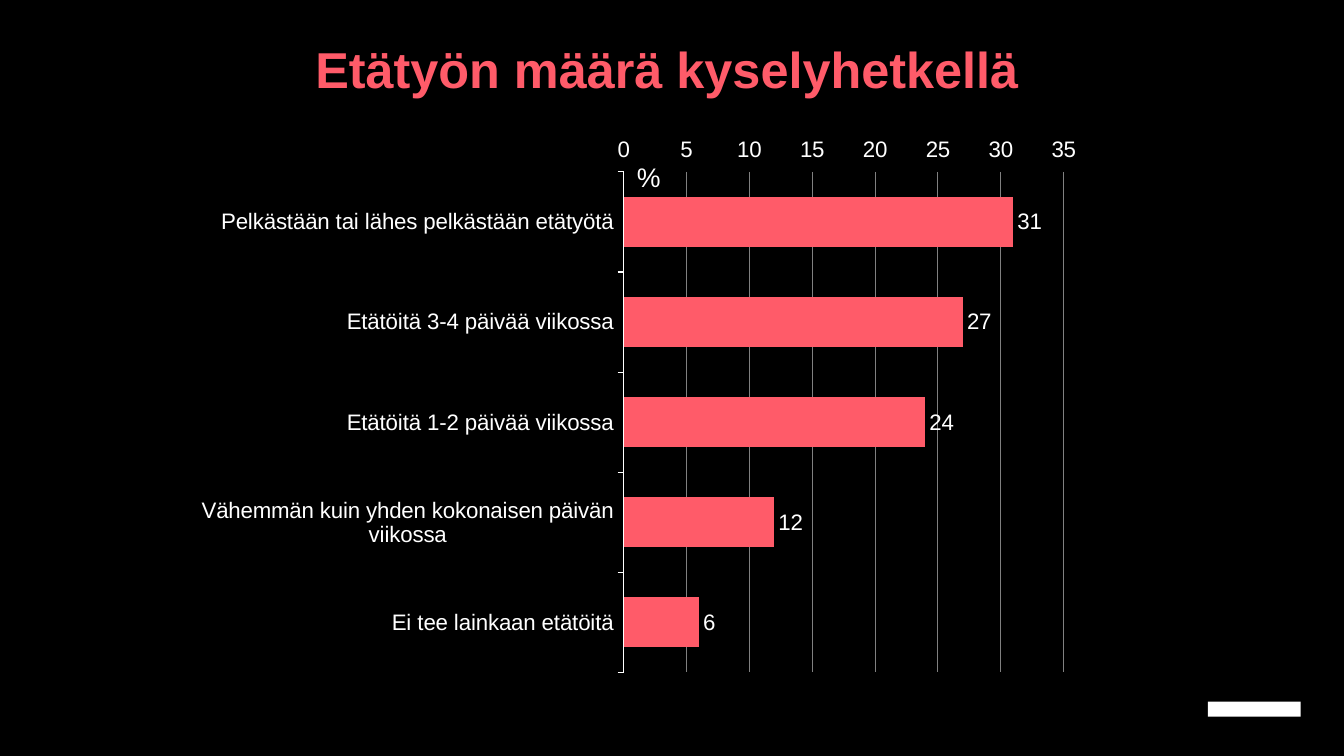
from pptx import Presentation
from pptx.chart.data import CategoryChartData
from pptx.dml.color import RGBColor
from pptx.enum.chart import XL_CHART_TYPE, XL_LABEL_POSITION, XL_TICK_MARK
from pptx.enum.shapes import MSO_SHAPE
from pptx.enum.text import MSO_ANCHOR, MSO_AUTO_SIZE, PP_ALIGN
from pptx.oxml import parse_xml
from pptx.oxml.ns import nsdecls, qn
from pptx.util import Inches, Pt

BAR = XL_CHART_TYPE.BAR_CLUSTERED
OUT_END = XL_LABEL_POSITION.OUTSIDE_END
OUT_TICK = XL_TICK_MARK.OUTSIDE
BLOCK = MSO_SHAPE.RECTANGLE
MIDDLE, CENTER = MSO_ANCHOR.MIDDLE, PP_ALIGN.CENTER
NO_FIT = MSO_AUTO_SIZE.NONE

BLACK = RGBColor(0x00, 0x00, 0x00)
WHITE = RGBColor(0xFF, 0xFF, 0xFF)
CORAL = RGBColor(0xFF, 0x5B, 0x69)
GREY = RGBColor(0x80, 0x80, 0x80)
FONT = "Arial"

SHARES = {
    "Pelkästään tai lähes pelkästään etätyötä": 31,
    "Etätöitä 3-4 päivää viikossa": 27,
    "Etätöitä 1-2 päivää viikossa": 24,
    "Vähemmän kuin yhden kokonaisen päivän viikossa": 12,
    "Ei tee lainkaan etätöitä": 6,
}


def style(font, size, color, bold=False):
    font.name, font.size, font.bold = FONT, Pt(size), bold
    font.color.rgb = color


def place(part, target="", **spots):
    """Fix a chart part at fractions of the chart's size."""
    old = part.find(qn("c:layout"))
    if old is not None:
        part.remove(old)
    inner = f'<c:layoutTarget val="{target}"/>' if target else ""
    inner += '<c:xMode val="edge"/><c:yMode val="edge"/>'
    inner += "".join(f'<c:{key} val="{val}"/>' for key, val in spots.items())
    layout = parse_xml(
        f'<c:layout {nsdecls("c")}><c:manualLayout>{inner}'
        "</c:manualLayout></c:layout>")
    text = part.find(qn("c:tx"))
    if text is None:
        part.insert(0, layout)
    else:
        text.addnext(layout)


def add_title(slide, text):
    title = slide.shapes.title
    title.left, title.top = Inches(1.25), Inches(0.29)
    title.width, title.height = Inches(10.83), Inches(0.86)
    frame = title.text_frame
    frame.text = text
    frame.word_wrap, frame.auto_size = True, NO_FIT
    frame.vertical_anchor = MIDDLE
    frame.margin_left, frame.margin_right = 0, Inches(0.1)
    line = frame.paragraphs[0]
    line.alignment, line.line_spacing = CENTER, 0.9
    style(line.font, 36, CORAL, True)


def add_mark(slide):
    mark = slide.shapes.add_shape(
        BLOCK, Inches(11.98), Inches(6.96), Inches(0.92), Inches(0.15))
    mark.shadow.inherit = False
    mark.fill.solid()
    mark.fill.fore_color.rgb = WHITE
    mark.line.fill.background()


def format_axes(chart):
    cats, vals = chart.category_axis, chart.value_axis
    cats.reverse_order = True
    cats.has_major_gridlines = False
    cats.format.line.color.rgb = WHITE
    cats.format.line.width = Pt(0.75)
    vals.minimum_scale, vals.maximum_scale, vals.major_unit = 0, 35, 5
    vals.format.line.fill.background()
    vals.has_major_gridlines = True
    grid = vals.major_gridlines.format.line
    grid.color.rgb, grid.width = GREY, Pt(0.75)
    vals.tick_labels.number_format = "0"
    vals.tick_labels.number_format_is_linked = False
    for axis in (cats, vals):
        axis.major_tick_mark = OUT_TICK
        style(axis.tick_labels.font, 16, WHITE)


def format_bars(plot):
    plot.gap_width, plot.vary_by_categories = 100, False
    bars = plot.series[0]
    bars.format.fill.solid()
    bars.format.fill.fore_color.rgb = CORAL
    labels = bars.data_labels
    labels.show_value, labels.position = True, OUT_END
    labels.number_format, labels.number_format_is_linked = "0", False
    style(labels.font, 16, WHITE)


def add_bars(slide, unit, shares):
    data = CategoryChartData(number_format="0")
    data.categories = list(shares)
    data.add_series(unit, list(shares.values()))
    chart = slide.shapes.add_chart(
        BAR, Inches(2), Inches(1.3), Inches(9.34), Inches(5.72), data).chart
    style(chart.font, 16, WHITE)
    chart.has_legend = False
    chart.has_title = True
    frame = chart.chart_title.text_frame
    frame.text = unit
    style(frame.paragraphs[0].font, 19.2, WHITE)
    head = chart.chart_title._element
    place(head, x=0.454, y=0.041)
    head.find(qn("c:overlay")).set("val", "1")
    area = head.getparent().find(qn("c:plotArea"))
    place(area, "inner", x=0.445, y=0.071, w=0.47, h=0.868)
    format_axes(chart)
    format_bars(chart.plots[0])


def main():
    deck = Presentation()
    deck.slide_width, deck.slide_height = Inches(13.33), Inches(7.5)
    slide = deck.slides.add_slide(deck.slide_layouts[5])
    slide.background.fill.solid()
    slide.background.fill.fore_color.rgb = BLACK
    add_mark(slide)
    add_title(slide, "Etätyön määrä kyselyhetkellä")
    add_bars(slide, "%", SHARES)
    deck.save("out.pptx")


if __name__ == "__main__":
    main()
